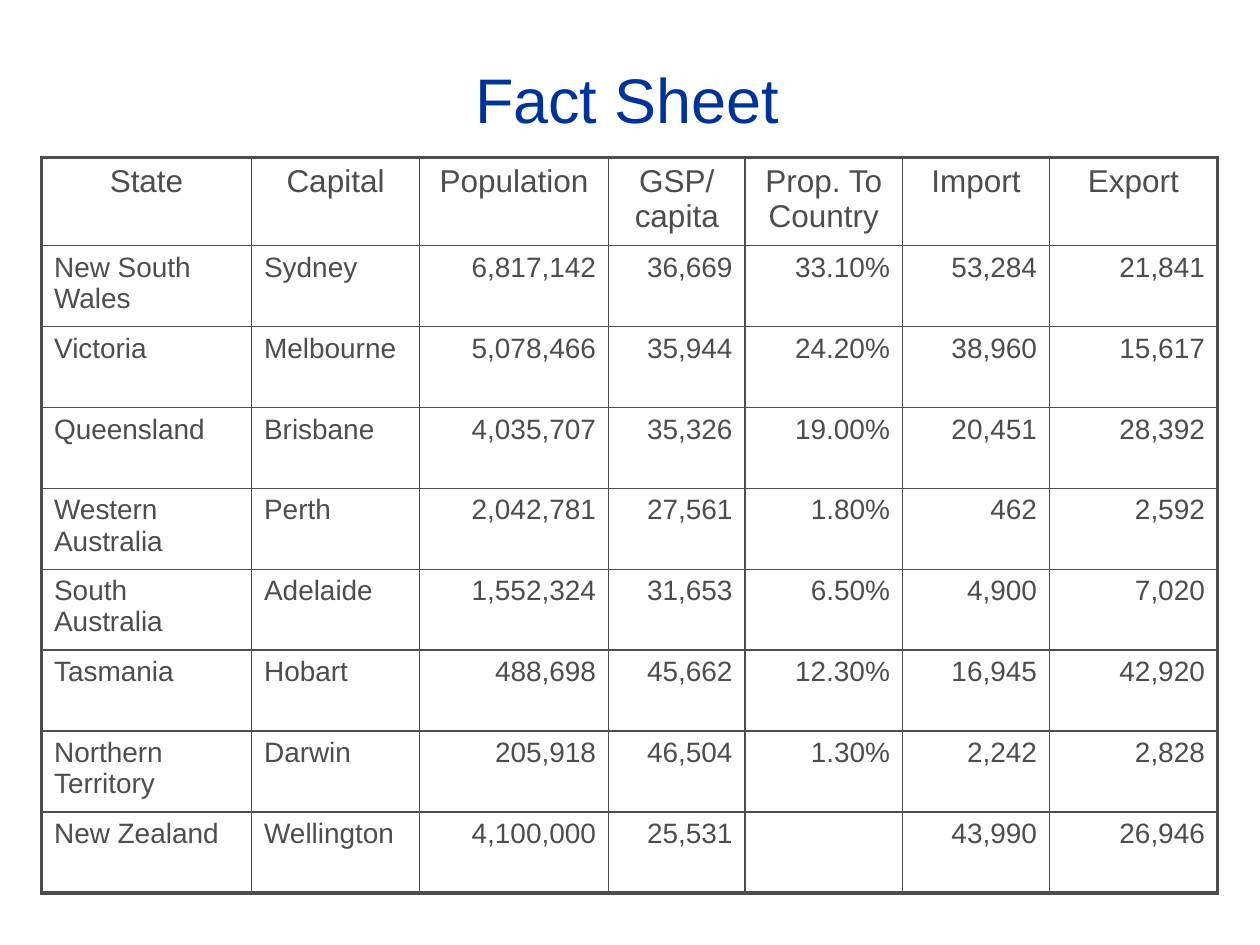
"""Build the Fact Sheet slide with its table of states."""
from lxml.etree import SubElement
from pptx import Presentation
from pptx.dml.color import RGBColor
from pptx.enum.text import MSO_ANCHOR, PP_ALIGN
from pptx.oxml.ns import qn
from pptx.util import Inches, Pt

COLORS = {"title": "003399", "ink": "4D4D4D"}
TITLE = "Fact Sheet"
HEADERS = ["State", "Capital", "Population", "GSP/ capita", "Prop. To Country", "Import", "Export"]
STATES = [
    ("New South Wales", "Sydney", "6,817,142", "36,669", "33.10%", "53,284", "21,841"),
    ("Victoria", "Melbourne", "5,078,466", "35,944", "24.20%", "38,960", "15,617"),
    ("Queensland", "Brisbane", "4,035,707", "35,326", "19.00%", "20,451", "28,392"),
    ("Western Australia", "Perth", "2,042,781", "27,561", "1.80%", "462", "2,592"),
    ("South Australia", "Adelaide", "1,552,324", "31,653", "6.50%", "4,900", "7,020"),
    ("Tasmania", "Hobart", "488,698", "45,662", "12.30%", "16,945", "42,920"),
    ("Northern Territory", "Darwin", "205,918", "46,504", "1.30%", "2,242", "2,828"),
    ("New Zealand", "Wellington", "4,100,000", "25,531", "", "43,990", "26,946"),
]
ROWS = [HEADERS, *STATES]
COL_TWELFTHS = [20, 16, 18, 13, 15, 14, 16]
LEFT, TOP, HEIGHT, HEADER_HEIGHT = 0.33, 1.25, 5.84, 0.7
THIN, THICK = 1, 2.25


def write(tf, text, size, color="ink", align=PP_ALIGN.LEFT):
    p = tf.paragraphs[0]
    p.alignment = align
    p.space_before = Pt(0)
    p.font.size = Pt(size)
    if text:
        r = p.add_run()
        r.text = text
        r.font.name = "Arial"
        r.font.size = Pt(size)
        r.font.color.rgb = RGBColor.from_string(COLORS[color])


def set_borders(cell, widths):
    tc_pr = cell._tc.get_or_add_tcPr()
    for side, width in widths.items():
        ln = SubElement(tc_pr, qn(f"a:ln{side}"), w=str(Pt(width)))
        fill = SubElement(ln, qn("a:solidFill"))
        SubElement(fill, qn("a:srgbClr"), val=COLORS["ink"])


def add_title(s):
    title = s.shapes.title
    title.left, title.top, title.width, title.height = map(Inches, (3.67, 0.5, 2.75, 0.56))
    tf = title.text_frame
    tf.vertical_anchor = MSO_ANCHOR.MIDDLE
    write(tf, TITLE, 36, color="title")


def add_facts(s):
    last_row, last_col = len(ROWS) - 1, len(HEADERS) - 1
    frame = s.shapes.add_table(len(ROWS), len(HEADERS), Inches(LEFT), Inches(TOP),
                               Inches(sum(COL_TWELFTHS) / 12), Inches(HEIGHT))
    table = frame.table
    table.first_row = table.horz_banding = False
    for col, twelfths in zip(table.columns, COL_TWELFTHS):
        col.width = Inches(twelfths / 12)
    for i, row in enumerate(table.rows):
        row.height = Inches((HEIGHT - HEADER_HEIGHT) / len(STATES) if i else HEADER_HEIGHT)
        for j, text in enumerate(ROWS[i]):
            cell = table.cell(i, j)
            body_align = PP_ALIGN.LEFT if j < 2 else PP_ALIGN.RIGHT
            write(cell.text_frame, text, 16 if i else 18,
                  align=body_align if i else PP_ALIGN.CENTER)
            outer = {"L": j == 0, "R": j == last_col, "T": i == 0, "B": i == last_row}
            set_borders(cell, {side: THICK if edge else THIN for side, edge in outer.items()})
            cell.fill.background()


def main():
    prs = Presentation()
    prs.slide_width, prs.slide_height = Inches(10), Inches(7.5)
    s = prs.slides.add_slide(prs.slide_layouts[5])
    add_title(s)
    add_facts(s)
    prs.save("out.pptx")


if __name__ == "__main__":
    main()
